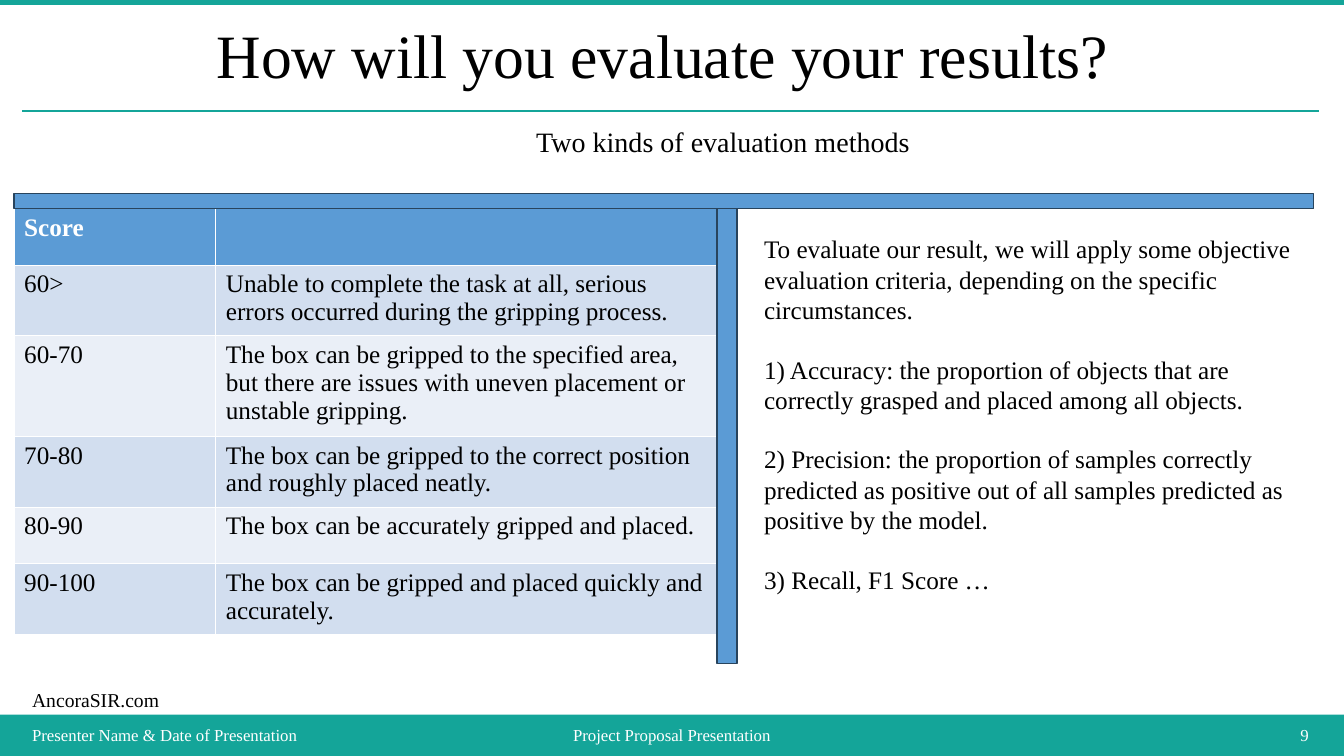
"""Builds the slide on how the gripping results will be evaluated."""
import pptx
import pptx.util
import pptx.dml.color
import pptx.enum.shapes
import pptx.enum.text
from pptx.util import Inches

TEAL, BLUE, NAVY = "14A599", "5B9BD5", "28445D"
WHITE, BLACK = "FFFFFF", "000000"
BANDS = ("D2DEEF", "EAEFF7")
ALIGN = pptx.enum.text.PP_ALIGN

SCORES = [
    ("Score", ""),
    ("60>", "Unable to complete the task at all, serious errors occurred during the gripping process."),
    ("60-70", "The box can be gripped to the specified area, but there are issues with uneven "
              "placement or unstable gripping."),
    ("70-80", "The box can be gripped to the correct position and roughly placed neatly."),
    ("80-90", "The box can be accurately gripped and placed."),
    ("90-100", "The box can be gripped and placed quickly and accurately."),
]
ROW_HEIGHTS = (0.56, 0.65, 0.85, 0.56, 0.56, 0.56)
CRITERIA = [
    "To evaluate our result, we will apply some objective evaluation criteria, "
    "depending on the specific circumstances.",
    "1) Accuracy: the proportion of objects that are correctly grasped and placed among all objects.",
    "2) Precision: the proportion of samples correctly predicted as positive out of all samples "
    "predicted as positive by the model.",
    "3) Recall, F1 Score …",
]
FOOTER = [
    (0.22, 4.86, "Presenter Name & Date of Presentation", ALIGN.LEFT),
    (5.08, 3.17, "Project Proposal Presentation", ALIGN.CENTER),
    (8.25, 4.83, "9", ALIGN.RIGHT),
]


def color(value):
    return pptx.dml.color.RGBColor.from_string(value)


class EvaluationSlide:
    font = "Times New Roman"

    def __init__(self, presentation):
        self.slide = presentation.slides.add_slide(presentation.slide_layouts[5])
        self.fill(self.slide.background, TEAL)

    def fill(self, target, value):
        target.fill.solid()
        target.fill.fore_color.rgb = color(value)

    def style(self, frame, size, value=BLACK, align=ALIGN.LEFT, bold=False):
        for paragraph in frame.paragraphs:
            paragraph.alignment = align
            for run in paragraph.runs:
                run.font.name = self.font
                run.font.size = pptx.util.Pt(size)
                run.font.bold = bold
                run.font.color.rgb = color(value)

    def title(self, left, top, width, height, text):
        title = self.slide.shapes.title
        title.left, title.top = Inches(left), Inches(top)
        title.width, title.height = Inches(width), Inches(height)
        frame = title.text_frame
        frame.text = text
        frame.auto_size = pptx.enum.text.MSO_AUTO_SIZE.NONE
        frame.vertical_anchor = pptx.enum.text.MSO_ANCHOR.MIDDLE
        frame.paragraphs[0].line_spacing = 0.9
        self.style(frame, 44, align=ALIGN.CENTER)
        self.slide.shapes.element.append(title.element)

    def bar(self, left, top, width, height, value, outline=None):
        shape = self.slide.shapes.add_shape(
            pptx.enum.shapes.MSO_SHAPE.RECTANGLE,
            Inches(left), Inches(top), Inches(width), Inches(height))
        shape.shadow.inherit = False
        self.fill(shape, value)
        if outline:
            shape.line.color.rgb = color(outline)
            shape.line.width = pptx.util.Pt(1)
        else:
            shape.line.fill.background()

    def rule(self, left, right, top):
        line = self.slide.shapes.add_connector(
            pptx.enum.shapes.MSO_CONNECTOR.STRAIGHT,
            Inches(left), Inches(top), Inches(right), Inches(top))
        line.line.color.rgb = color(TEAL)
        line.line.width = pptx.util.Pt(1)
        properties = line.element.spPr
        properties.append(properties.makeelement(pptx.oxml.ns.qn("a:effectLst"), {}))

    def text(self, left, top, width, height, text, size, value=BLACK,
             align=ALIGN.LEFT, wrap=True, middle=False, gap=0):
        box = self.slide.shapes.add_textbox(
            Inches(left), Inches(top), Inches(width), Inches(height))
        frame = box.text_frame
        frame.text = text
        frame.word_wrap = wrap
        if middle:
            frame.vertical_anchor = pptx.enum.text.MSO_ANCHOR.MIDDLE
        self.style(frame, size, value, align)
        for paragraph in frame.paragraphs[1:]:
            paragraph.space_before = pptx.util.Pt(gap)

    def table(self, left, top, columns, heights, rows):
        table = self.slide.shapes.add_table(
            len(rows), len(columns), Inches(left), Inches(top),
            Inches(sum(columns)), Inches(sum(heights))).table
        for column, width in zip(table.columns, columns):
            column.width = Inches(width)
        for index, texts in enumerate(rows):
            header = index == 0
            table.rows[index].height = Inches(heights[index])
            for cell, text in zip(table.rows[index].cells, texts):
                cell.text = text
                self.fill(cell, BLUE if header else BANDS[(index - 1) % 2])
                self.style(cell.text_frame, 18, WHITE if header else BLACK, bold=header)


def main():
    presentation = pptx.Presentation()
    presentation.slide_width = Inches(13.33)
    presentation.slide_height = Inches(7.5)
    page = EvaluationSlide(presentation)
    page.bar(0, 0.05, 13.33, 7.04, WHITE)
    page.text(0.22, 6.78, 1.47, 0.34, "AncoraSIR.com", 14, wrap=False)
    page.rule(0.22, 13.08, 1.1)
    page.title(0.22, 0.08, 12.86, 1.01, "How will you evaluate your results? ")
    for left, width, text, align in FOOTER:
        page.text(left, 7.09, width, 0.4, text, 12, WHITE, align, middle=True)
    page.text(7.48, 2.27, 5.56, 4.04, "\n".join(CRITERIA), 18, gap=21)
    page.table(0.14, 2.07, (2, 4.99), ROW_HEIGHTS, SCORES)
    page.bar(7.11, 2.07, 0.2, 4.51, BLUE, NAVY)
    page.bar(0.14, 1.92, 12.89, 0.15, BLUE, NAVY)
    page.text(5.22, 1.19, 3.93, 0.44, "Two kinds of evaluation methods", 20, wrap=False)
    presentation.save("out.pptx")


if __name__ == "__main__":
    main()
